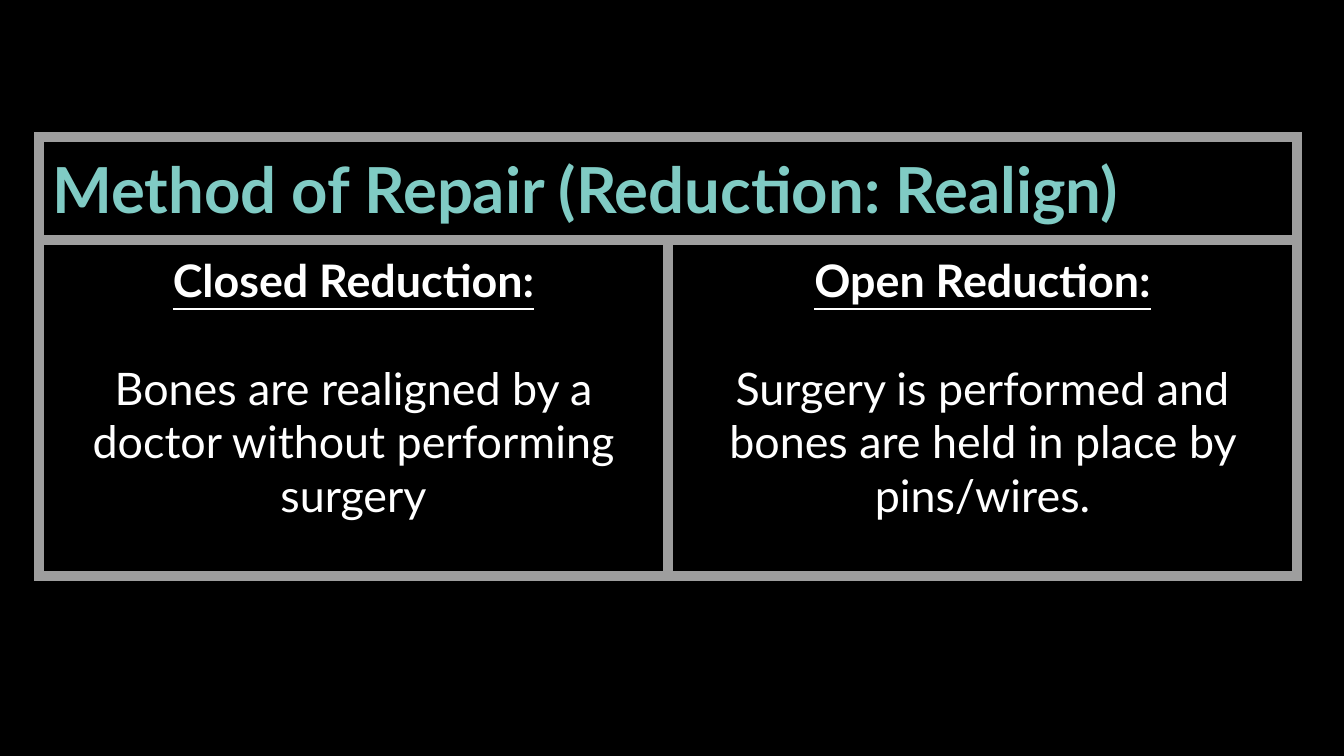
from dataclasses import dataclass

from lxml.etree import SubElement
from pptx import Presentation
from pptx.dml.color import RGBColor
from pptx.enum.text import PP_ALIGN
from pptx.oxml.ns import qn
from pptx.table import _Cell as Cell
from pptx.text.text import _Paragraph as Paragraph
from pptx.util import Inches, Pt

BLACK = RGBColor(0x00, 0x00, 0x00)
WHITE = RGBColor(0xFF, 0xFF, 0xFF)
TEAL = RGBColor(0x80, 0xCB, 0xC4)
GRAY = RGBColor(0x9E, 0x9E, 0x9E)
FONT = "Lato"
BORDER = Pt(6)
SLIDE_WIDTH = 10
COL_WIDTH = 4.68
ROW_HEIGHTS = (0.76, 2.5)


@dataclass
class Method:
    name: str
    description: str


METHODS = [
    Method("Closed Reduction:",
           "Bones are realigned by a doctor without performing surgery"),
    Method("Open Reduction:",
           "Surgery is performed and bones are held in place by pins/wires."),
]


def style_cell(cell: Cell) -> None:
    """Set the margins, the four borders and an empty fill."""
    cell.margin_left = cell.margin_right = Inches(0.1)
    cell.margin_top = cell.margin_bottom = Inches(0.1)
    tc_pr = cell._tc.get_or_add_tcPr()
    for side in ("a:lnL", "a:lnR", "a:lnT", "a:lnB"):
        ln = SubElement(tc_pr, qn(side), w=str(BORDER))
        fill = SubElement(ln, qn("a:solidFill"))
        SubElement(fill, qn("a:srgbClr"), val=str(GRAY))
    cell.fill.background()


def write(p: Paragraph, text: str, size: int, color: RGBColor,
          bold: bool = False, underline: bool = False) -> None:
    p.text = text
    p.font.name = FONT
    p.font.size = Pt(size)
    p.font.color.rgb = color
    p.font.bold = bold
    p.font.underline = underline


def write_method(cell: Cell, method: Method) -> None:
    tf = cell.text_frame
    heading, body = tf.paragraphs[0], tf.add_paragraph()
    write(heading, method.name, 24, WHITE, bold=True, underline=True)
    write(body, method.description, 24, WHITE)
    heading.alignment = body.alignment = PP_ALIGN.CENTER
    body.space_before = Pt(28.8)


def main() -> None:
    prs = Presentation()
    prs.slide_width = Inches(SLIDE_WIDTH)
    prs.slide_height = Inches(SLIDE_WIDTH * 9 / 16)
    slide = prs.slides.add_slide(prs.slide_layouts[6])
    slide.background.fill.solid()
    slide.background.fill.fore_color.rgb = BLACK

    table = slide.shapes.add_table(
        len(ROW_HEIGHTS), len(METHODS), Inches(0.29), Inches(1.02),
        Inches(COL_WIDTH * len(METHODS)), Inches(sum(ROW_HEIGHTS))).table
    table.first_row = table.horz_banding = False
    for row, height in zip(table.rows, ROW_HEIGHTS):
        row.height = Inches(height)
    for cell in table.iter_cells():
        style_cell(cell)

    title = table.cell(0, 0)
    title.merge(table.cell(0, len(METHODS) - 1))
    write(title.text_frame.paragraphs[0],
          "Method of Repair (Reduction: Realign)", 34, TEAL, bold=True)
    for col, method in enumerate(METHODS):
        write_method(table.cell(1, col), method)

    prs.save("out.pptx")


if __name__ == "__main__":
    main()
